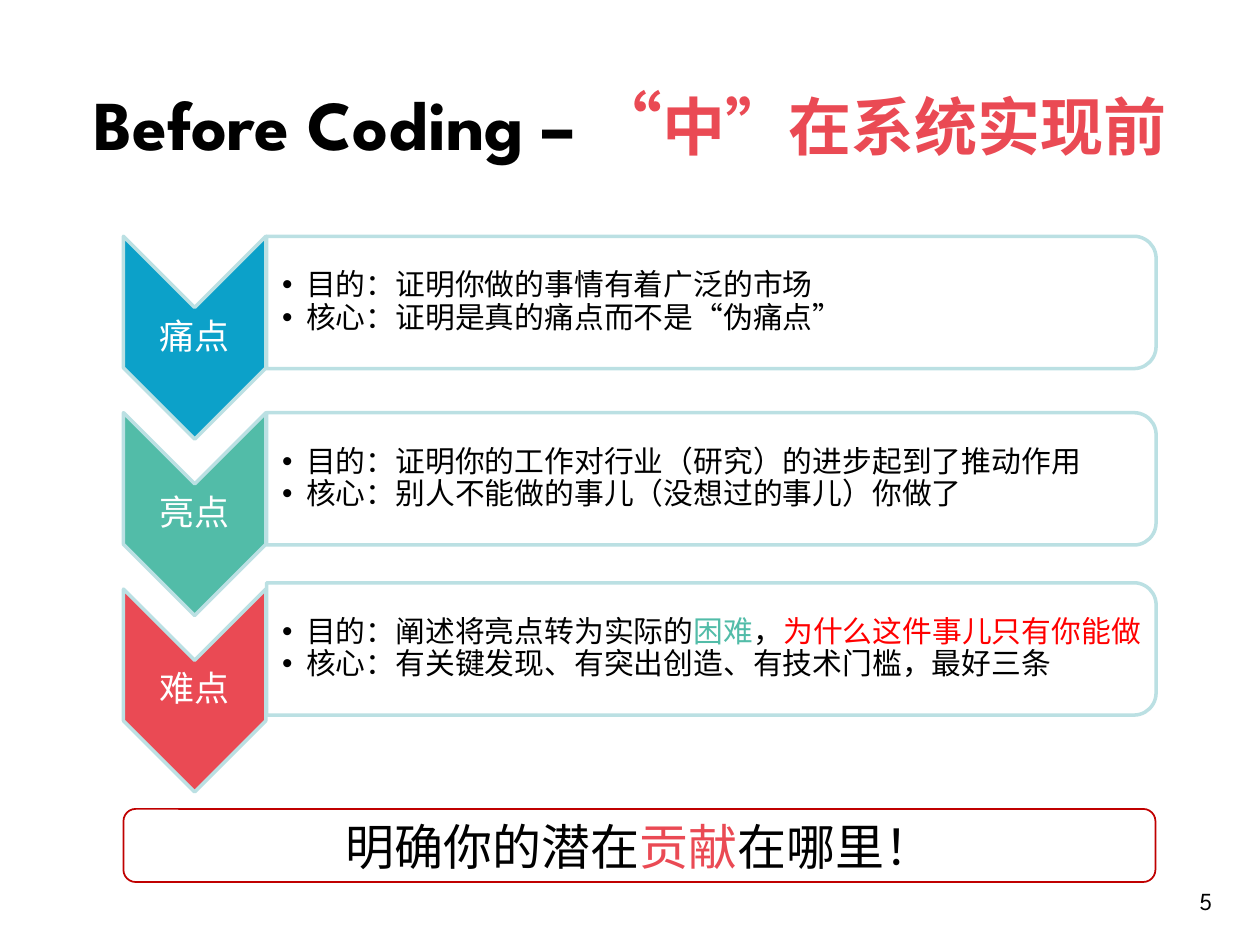
from lxml.etree import SubElement
from pptx import Presentation
from pptx.dml.color import RGBColor
from pptx.enum.lang import MSO_LANGUAGE_ID as Language
from pptx.enum.shapes import MSO_SHAPE as Shape
from pptx.enum.text import MSO_ANCHOR as Anchor, MSO_AUTO_SIZE as AutoSize, PP_ALIGN as Align
from pptx.oxml.ns import qn
from pptx.util import Inches, Pt

FONT = "League Spartan"
BLACK, WHITE, PALE = "000000", "FFFFFF", "BBE0E3"
BLUE, TEAL, CORAL, RED, DARK_RED = "0CA1C9", "52BCA8", "EA4A54", "FF0000", "C00000"

deck = Presentation()
deck.slide_width, deck.slide_height = Inches(10), Inches(7.5)
column, row = deck.slide_width / 100, deck.slide_height / 75
page = deck.slides.add_slide(deck.slide_layouts.get_by_name("Comparison"))
title, *bodies = page.placeholders
spare = bodies.pop()
spare.element.getparent().remove(spare.element)


def area(left, top, width, height):
    return [round(left * column), round(top * row), round(width * column), round(height * row)]


def write(para, spans, size, align=Align.LEFT, bold=False):
    para.alignment = align
    para.font.name, para.font.size, para.font.bold = FONT, Pt(size), bold
    for text, color in spans:
        span = para.add_run()
        span.text = text
        span.font.color.rgb = RGBColor.from_string(color)
        span.font.language_id = Language.SIMPLIFIED_CHINESE


title.left, title.top, title.width, title.height = area(5.4, 4.1, 89.2, 11.2)
title.text_frame.auto_size = AutoSize.NONE
title.text_frame.vertical_anchor = Anchor.MIDDLE
heading = title.text_frame.paragraphs[0]
write(heading, [("Before Coding – ", BLACK), ("“", CORAL), ("中”在系统实现前", CORAL)], 40, Align.CENTER, True)
heading.runs[-1].font.size = Pt(36)

steps = [
    ("痛点", BLUE, 24, [
        [("目的：证明你做的事情有着广泛的市场", BLACK)],
        [("核心：证明是真的痛点而不是“伪痛点”", BLACK)],
    ]),
    ("亮点", TEAL, 38, [
        [("目的：证明你的工作对行业（研究）的进步起到了推动作用", BLACK)],
        [("核心：别人不能做的事儿（没想过的事儿）你做了", BLACK)],
    ]),
    ("难点", CORAL, 51.5, [
        [("目的：阐述将亮点转为实际的", BLACK), ("困难", TEAL), ("，", BLACK),
         ("为什么这件事儿只有你能做", RED)],
        [("核心：有关键发现、有突出创造、有技术门槛，最好三条", BLACK)],
    ]),
]

for index, (name, color, middle, points) in enumerate(steps):
    chevron_middle = 26.8 + 14 * index
    outlines = [
        (Shape.CHEVRON, color, area(7.4, chevron_middle - 5.65, 16.1, 11.3)),
        (Shape.ROUND_2_SAME_RECTANGLE, WHITE, area(51.2, middle - 35.3, 10.5, 70.6)),
    ]
    for kind, fill, place in outlines:
        outline = page.shapes.add_shape(kind, *place)
        outline.rotation = 90
        outline.shadow.inherit = False
        outline.fill.solid()
        outline.fill.fore_color.rgb = RGBColor.from_string(fill)
        outline.line.color.rgb = RGBColor.from_string(PALE)
        outline.line.width = Pt(2)
    alpha = SubElement(outline.fill.fore_color._xFill.find(qn("a:srgbClr")), qn("a:alpha"))
    alpha.set("val", "90000")

    label = page.shapes.add_textbox(*area(9.8, chevron_middle - 2.4, 11.3, 4.8))
    body = bodies[index]
    body.left, body.top, body.width, body.height = area(21.1, middle - 4.7, 70.1, 9.4)
    page.shapes._spTree.append(body.element)
    for box, inset in ((label, 0.01), (body, 0.13)):
        frame = box.text_frame
        frame.word_wrap = True
        frame.auto_size = AutoSize.NONE
        frame.vertical_anchor = Anchor.MIDDLE
        frame.margin_left = Inches(inset)
        frame.margin_top = frame.margin_right = frame.margin_bottom = Inches(0.01)

    caption = label.text_frame.paragraphs[0]
    caption.line_spacing = 0.9
    write(caption, [(name, WHITE)], 20, Align.CENTER)

    for order, spans in enumerate(points):
        para = body.text_frame.add_paragraph() if order else body.text_frame.paragraphs[0]
        para.line_spacing, para.space_before, para.space_after = 0.9, Pt(0), Pt(0)
        settings = para._p.get_or_add_pPr()
        settings.set("marL", str(Inches(0.19)))
        settings.set("indent", str(-Inches(0.19)))
        SubElement(settings, qn("a:buFont")).set("typeface", "Arial")
        SubElement(settings, qn("a:buChar")).set("char", "•")
        write(para, spans, 17)

banner = page.shapes.add_shape(Shape.ROUNDED_RECTANGLE, *area(9.8, 64.2, 81.9, 5.8))
banner.shadow.inherit = False
banner.fill.solid()
banner.fill.fore_color.rgb = RGBColor.from_string(WHITE)
banner.line.color.rgb = RGBColor.from_string(DARK_RED)
banner.line.width = Pt(1)
banner.text_frame.vertical_anchor = Anchor.MIDDLE
write(banner.text_frame.paragraphs[0],
      [("明确你的潜在", BLACK), ("贡献", CORAL), ("在哪里！", BLACK)], 28, Align.CENTER)

number = page.shapes.add_textbox(*area(73.9, 69.8, 23.3, 5.2))
number.text_frame.word_wrap = True
write(number.text_frame.paragraphs[0], [("5", BLACK)], 14, Align.RIGHT)

deck.save("out.pptx")
